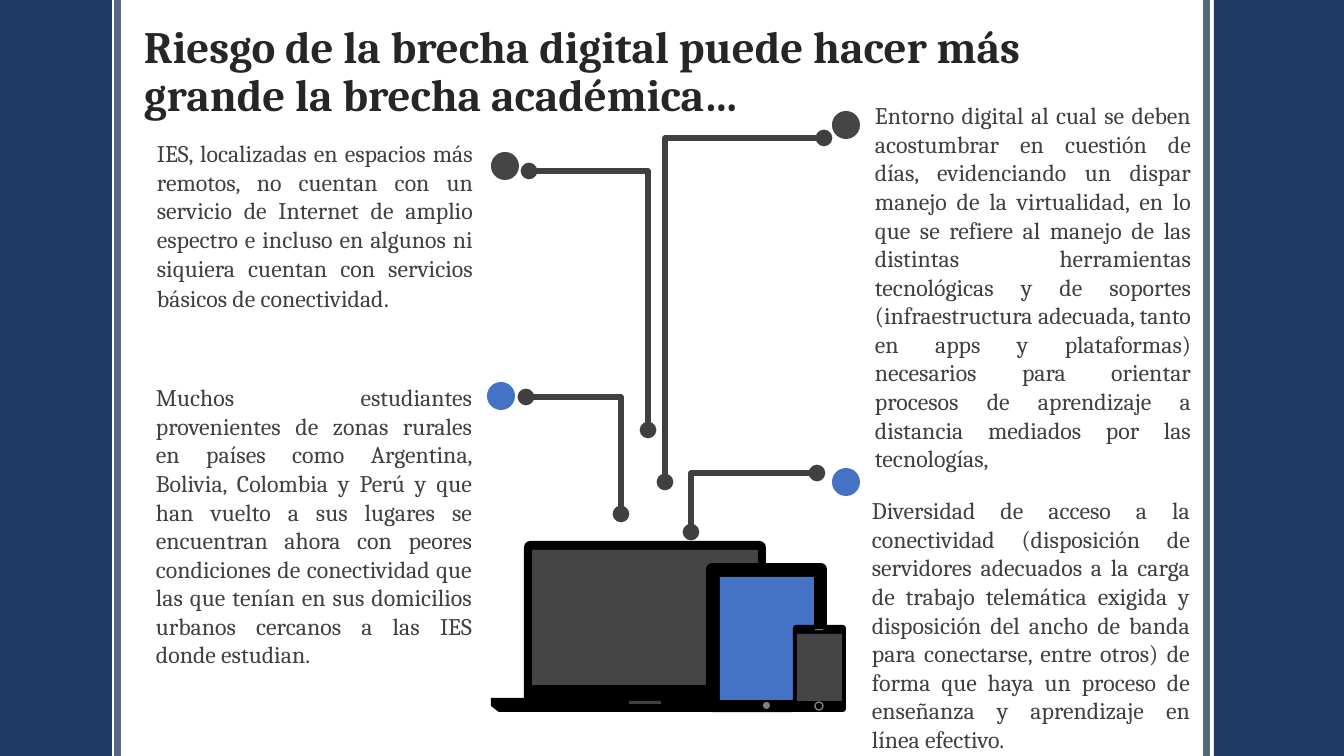
from pptx import Presentation
from pptx.dml.color import RGBColor
from pptx.enum.shapes import MSO_CONNECTOR, MSO_SHAPE
from pptx.enum.text import MSO_ANCHOR, PP_ALIGN
from pptx.oxml.ns import qn
from pptx.util import Emu, Pt
from lxml.etree import SubElement

SCALE = 914400 / 100.8  # EMU per px
WIDE, HIGH = 1344, 756
FONT = "Cambria"
NAVY, SLATE, BLUE = "203864", "57687C", "4472C4"
BLACK, DARK, GRAY, INK = "000000", "454545", "808080", "404040"

TITLE = "Riesgo de la brecha digital puede hacer más grande la brecha académica…"

# Each point: text box, text runs (text, size), dot corner, dot colour,
# link start beside the dot, link end above the devices
POINTS = [
    ((147, 134, 336, 214),
     [("IES, localizadas en espacios más remotos, no cuentan con un servicio de "
       "Internet de amplio espectro e incluso en algunos ni siquiera cuentan con "
       "servicios básicos de conectividad", 17), (".", 18)],
     (491, 152), DARK, (529, 171), (648, 430)),
    ((146, 378, 336, 298),
     [("Muchos estudiantes provenientes de zonas rurales en países como Argentina, "
       "Bolivia, Colombia y Perú y que han vuelto a sus lugares se encuentran ahora "
       "con peores condiciones de conectividad que las que tenían en sus domicilios "
       "urbanos cercanos a las IES donde estudian.", 17)],
     (487, 382), BLUE, (526, 397), (621, 514)),
    ((865, 96, 336, 385),
     [("Entorno digital al cual se deben acostumbrar en cuestión de días, "
       "evidenciando un dispar manejo de la virtualidad, en lo que se refiere al "
       "manejo de las distintas herramientas tecnológicas y de soportes "
       "(infraestructura adecuada, tanto en apps y plataformas) necesarios para "
       "orientar procesos de aprendizaje a distancia mediados por las "
       "tecnologías,", 17)],
     (832, 111), DARK, (824, 138), (665, 482)),
    ((862, 491, 338, 270),
     [("Diversidad de acceso a la conectividad (disposición de servidores adecuados "
       "a la carga de trabajo telemática exigida y disposición del ancho de banda "
       "para conectarse, entre otros) de forma que haya un proceso de enseñanza y "
       "aprendizaje en línea efectivo.", 17)],
     (832, 468), BLUE, (817, 473), (691, 532)),
]

RECT, OVAL = MSO_SHAPE.RECTANGLE, MSO_SHAPE.OVAL
ROUND, TOP = MSO_SHAPE.ROUNDED_RECTANGLE, MSO_SHAPE.ROUND_2_SAME_RECTANGLE

# Each part: kind, box, fill, first adjustment, rotation
DEVICES = [
    # Laptop
    (TOP, (524, 541, 242, 157), BLACK, 0.04, 0),
    (RECT, (532, 550, 226, 135), DARK, None, 0),
    (RECT, (491, 698, 308, 8), BLACK, None, 0),
    (MSO_SHAPE.TRAPEZOID, (491, 706, 308, 6), BLACK, 1.3, 180),
    (RECT, (629, 701, 32, 3), INK, None, 0),
    # Tablet
    (ROUND, (706, 563, 121, 149), BLACK, 0.05, 0),
    (RECT, (720, 577, 94, 123), BLUE, None, 0),
    (OVAL, (763, 702, 7, 7), GRAY, None, 0),
    # Phone
    (ROUND, (793, 625, 53, 87), BLACK, 0.06, 0),
    (RECT, (797, 634, 45, 67), DARK, None, 0),
    (ROUND, (815, 629, 8, 1), GRAY, 0.5, 0),
]
HOME = (815, 702, 8, 8)


def px(*sizes):
    return [Emu(round(size * SCALE)) for size in sizes]


def color(code):
    return RGBColor.from_string(code)


def draw(kind, box, fill=None, adj=None, turn=0, line=None):
    shape = slide.shapes.add_shape(kind, *px(*box))
    shape.shadow.inherit = False
    shape.rotation = turn
    if adj is not None:
        shape.adjustments[0] = adj
    if fill:
        shape.fill.solid()
        shape.fill.fore_color.rgb = color(fill)
    else:
        shape.fill.background()
    if line:
        shape.line.color.rgb = color(line)
        shape.line.width = Pt(1)
    else:
        shape.line.fill.background()


def join(kind, start, end, tint, width, ovals=False):
    link = slide.shapes.add_connector(kind, *px(*start, *end))
    link.line.color.rgb = color(tint)
    link.line.width = Pt(width)
    props = link._element.spPr
    if ovals:
        for tag in ("a:headEnd", "a:tailEnd"):
            SubElement(props.find(qn("a:ln")), qn(tag), type="oval")
    SubElement(props, qn("a:effectLst"))
    return link


def bend(start, end):
    # Run level from the dot, then turn straight down at the far end
    link = join(MSO_CONNECTOR.ELBOW, start, end, INK, 4, ovals=True)
    geom = link._element.spPr.find(qn("a:prstGeom"))
    guides = geom.find(qn("a:avLst"))
    SubElement(guides, qn("a:gd"), name="adj1", fmla="val 100000")


def write(box, runs, tint=INK, bold=False, align=PP_ALIGN.JUSTIFY,
          anchor=MSO_ANCHOR.TOP, lead=None, before=None):
    frame = slide.shapes.add_textbox(*px(*box)).text_frame
    frame.word_wrap = True
    frame.vertical_anchor = anchor
    para = frame.paragraphs[0]
    para.alignment = align
    para.line_spacing = lead
    para.space_before = before
    for text, size in runs:
        run = para.add_run()
        run.text = text
        run.font.name = FONT
        run.font.size = Pt(size)
        run.font.bold = bold
        run.font.color.rgb = color(tint)


deck = Presentation()
deck.slide_width, deck.slide_height = px(WIDE, HIGH)
slide = deck.slides.add_slide(deck.slide_layouts[6])

# Side bands and their rules
for left, width in ((0, 112), (1214, WIDE - 1214)):
    draw(RECT, (left, 0, width, HIGH), NAVY)
for x in (118, 1207):
    join(MSO_CONNECTOR.STRAIGHT, (x, 0), (x, HIGH), SLATE, 5)

# Title
write((134, 16, 1040, 114), [(TITLE, 32)], tint="262626", bold=True,
      align=PP_ALIGN.LEFT, anchor=MSO_ANCHOR.MIDDLE, lead=0.9, before=Pt(10))

# Devices
for part in DEVICES:
    draw(*part)
draw(OVAL, HOME, line=GRAY)

# Points with their dots and links
for box, runs, dot, tint, start, end in POINTS:
    bend(start, end)
    draw(OVAL, (*dot, 28, 28), tint)
    write(box, runs)

deck.save("out.pptx")
